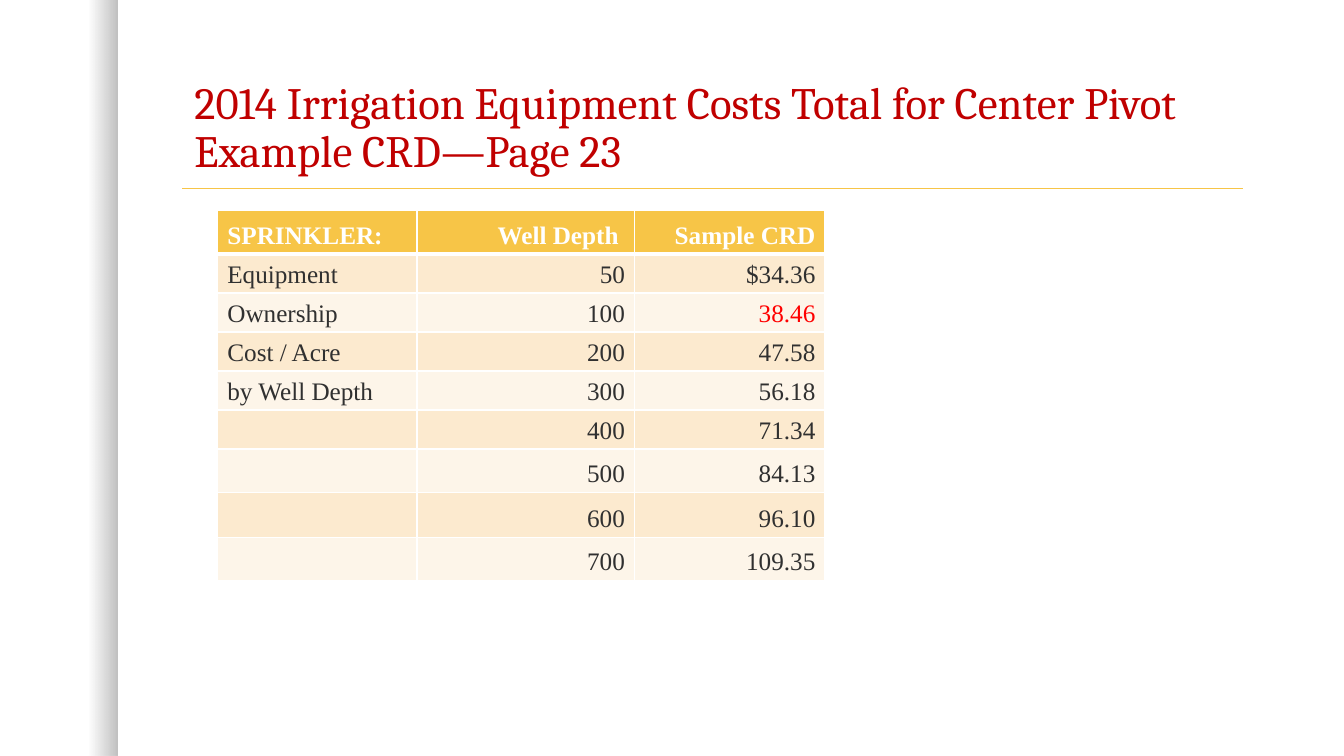
from dataclasses import dataclass

from lxml import etree
from pptx import Presentation
from pptx.dml.color import RGBColor
from pptx.enum.shapes import MSO_CONNECTOR, MSO_SHAPE
from pptx.enum.text import MSO_ANCHOR, PP_ALIGN
from pptx.oxml.ns import qn
from pptx.slide import Slide
from pptx.table import _Cell
from pptx.util import Cm, Pt

RECTANGLE = MSO_SHAPE.RECTANGLE
STRAIGHT = MSO_CONNECTOR.STRAIGHT
BOTTOM = MSO_ANCHOR.BOTTOM
LEFT, RIGHT = PP_ALIGN.LEFT, PP_ALIGN.RIGHT

COLORS = {
    "white": "FFFFFF", "black": "000000", "title": "C00000", "gold": "F7C547",
    "band_dark": "FCEACF", "band_light": "FDF5E9", "text": "303030", "highlight": "FF0000",
}
TITLE_FONT, TABLE_FONT = "Cambria", "Times New Roman"
TITLE_LINES = ("2014 Irrigation Equipment Costs Total for Center Pivot", "Example CRD—Page 23")
TABLE_SIZE = 18
COLUMN_WIDTHS = (5.02, 5.48, 4.8)


@dataclass
class CostRow:
    label: str
    depth: str
    cost: str
    height: float = 0.96
    cost_color: str = "text"


HEADER = CostRow("SPRINKLER:", "Well Depth\u00a0", "Sample CRD", 1.1, "white")
COST_ROWS = [
    CostRow("Equipment", "50", "$34.36"),
    CostRow("Ownership", "100", "38.46", cost_color="highlight"),
    CostRow("Cost / Acre", "200", "47.58"),
    CostRow("by Well Depth", "300", "56.18"),
    CostRow("", "400", "71.34"),
    CostRow("", "500", "84.13", 1.09),
    CostRow("", "600", "96.10", 1.14),
    CostRow("", "700", "109.35", 1.09),
]


def rgb(name: str) -> RGBColor:
    return RGBColor.from_string(COLORS[name])


def add_side_shadow(slide: Slide) -> None:
    shape = slide.shapes.add_shape(RECTANGLE, 0, 0, Cm(2.95), Cm(19.05))
    shape.shadow.inherit = False
    shape.line.fill.background()
    shape.fill.gradient()
    shape.fill.gradient_angle = 0
    for stop, position in zip(shape.fill.gradient_stops, (0.75, 1)):
        stop.position = position
        stop.color.rgb = rgb("black")
    opacities = ("0", "25000")
    for color, opacity in zip(shape._element.spPr.iter(qn("a:srgbClr")), opacities):
        etree.SubElement(color, qn("a:alpha"), val=opacity)


def add_title(slide: Slide) -> None:
    box = slide.shapes.add_textbox(Cm(4.65), Cm(1.27), Cm(27.38), Cm(3.33))
    frame = box.text_frame
    frame.word_wrap = True
    frame.vertical_anchor = BOTTOM
    paragraph = frame.paragraphs[0]
    paragraph.line_spacing = 0.9
    for index, line in enumerate(TITLE_LINES):
        if index:
            paragraph.add_line_break()
        run = paragraph.add_run()
        run.text = line
        run.font.name = TITLE_FONT
        run.font.size = Pt(32)
        run.font.color.rgb = rgb("title")


def add_title_rule(slide: Slide) -> None:
    rule = slide.shapes.add_connector(STRAIGHT, Cm(4.6), Cm(4.75), Cm(31.32), Cm(4.75))
    rule.line.color.rgb = rgb("gold")
    rule.line.width = Pt(1)
    etree.SubElement(rule._element.spPr, qn("a:effectLst"))


def set_borders(cell: _Cell, top: int, bottom: int) -> None:
    properties = cell._tc.get_or_add_tcPr()
    for side, points in (("L", 1), ("R", 1), ("T", top), ("B", bottom)):
        line = etree.SubElement(properties, qn(f"a:ln{side}"), w=str(Pt(points)))
        fill = etree.SubElement(line, qn("a:solidFill"))
        etree.SubElement(fill, qn("a:srgbClr"), val=COLORS["white"])


def fill_cell(cell: _Cell, text: str, color: str, bold: bool, align: PP_ALIGN) -> None:
    cell.margin_left = cell.margin_right = Cm(0.24)
    cell.margin_top = cell.margin_bottom = Cm(0.11)
    cell.vertical_anchor = BOTTOM
    paragraph = cell.text_frame.paragraphs[0]
    paragraph.alignment = align
    if text:
        run = paragraph.add_run()
        run.text = text
        run.font.name = TABLE_FONT
        run.font.size = Pt(TABLE_SIZE)
        run.font.bold = bold
        run.font.color.rgb = rgb(color)
    else:
        # A small end mark keeps an empty cell from stretching its row
        etree.SubElement(paragraph._p, qn("a:endParaRPr"), sz="1200")


def add_cost_table(slide: Slide) -> None:
    rows = [HEADER, *COST_ROWS]
    frame = slide.shapes.add_table(
        len(rows), len(COLUMN_WIDTHS), Cm(5.49), Cm(5.3),
        Cm(sum(COLUMN_WIDTHS)), Cm(sum(row.height for row in rows)))
    table = frame.table
    for column, width in zip(table.columns, COLUMN_WIDTHS):
        column.width = Cm(width)
    for index, row in enumerate(rows):
        table.rows[index].height = Cm(row.height)
        is_header = index == 0
        band = "gold" if is_header else "band_dark" if index % 2 else "band_light"
        text_color = "white" if is_header else "text"
        contents = (
            (row.label, text_color, LEFT),
            (row.depth, text_color, RIGHT),
            (row.cost, row.cost_color, RIGHT),
        )
        for column_index, (text, color, align) in enumerate(contents):
            cell = table.cell(index, column_index)
            set_borders(cell, 3 if index == 1 else 1, 3 if is_header else 1)
            cell.fill.solid()
            cell.fill.fore_color.rgb = rgb(band)
            fill_cell(cell, text, color, is_header, align)


def main() -> None:
    presentation = Presentation()
    presentation.slide_width, presentation.slide_height = Cm(33.87), Cm(19.05)
    slide = presentation.slides.add_slide(presentation.slide_layouts[6])
    # Background and side shadow
    slide.background.fill.solid()
    slide.background.fill.fore_color.rgb = rgb("white")
    add_side_shadow(slide)
    # Title with its rule
    add_title_rule(slide)
    add_title(slide)
    # Costs by well depth
    add_cost_table(slide)
    presentation.save("out.pptx")


if __name__ == "__main__":
    main()
